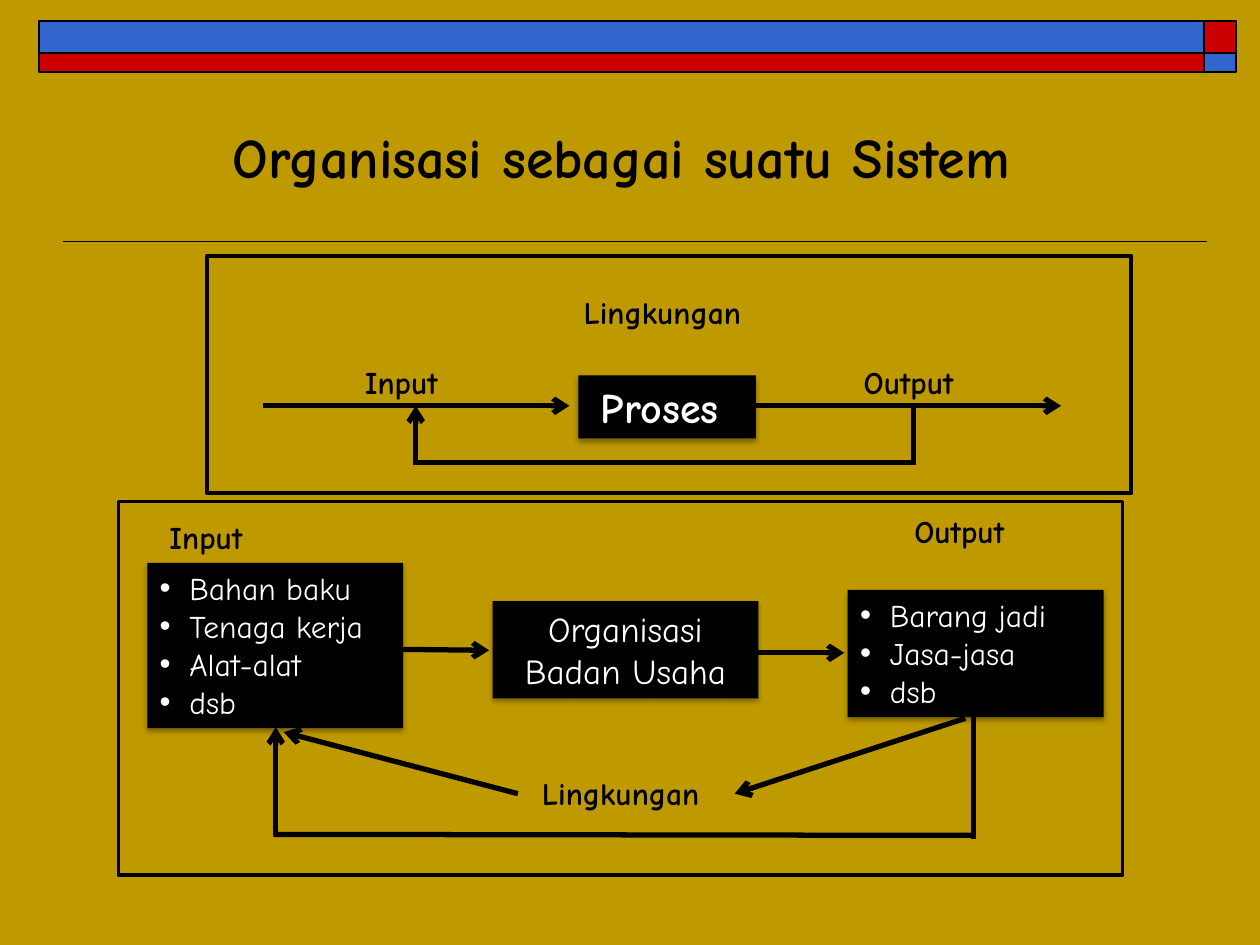
from lxml import etree
from pptx import Presentation
from pptx.dml.color import RGBColor
from pptx.enum.shapes import MSO_CONNECTOR, MSO_SHAPE
from pptx.enum.text import MSO_ANCHOR, PP_ALIGN
from pptx.oxml import parse_xml
from pptx.oxml.ns import nsdecls, qn
from pptx.util import Cm, Pt

GOLD = RGBColor(0xBF, 0x99, 0x00)
BLUE = RGBColor(0x33, 0x66, 0xCC)
RED = RGBColor(0xCC, 0x00, 0x00)
BLACK = RGBColor(0x00, 0x00, 0x00)
WHITE = RGBColor(0xFF, 0xFF, 0xFF)
FONT = "Comic Neue"
RECTANGLE = MSO_SHAPE.RECTANGLE
STRAIGHT = MSO_CONNECTOR.STRAIGHT
CENTER, LEFT = PP_ALIGN.CENTER, PP_ALIGN.LEFT
TOP, BOTTOM = MSO_ANCHOR.TOP, MSO_ANCHOR.BOTTOM
SHADOW = (
    f'<a:effectLst {nsdecls("a")}><a:outerShdw blurRad="40000" dist="23000" '
    'dir="5400000" rotWithShape="0"><a:srgbClr val="000000">'
    '<a:alpha val="35000"/></a:srgbClr></a:outerShdw></a:effectLst>'
)


def write_text(shape, lines, size, color, bold, bulleted=False, anchor=TOP):
    frame = shape.text_frame
    frame.word_wrap = True
    frame.vertical_anchor = anchor
    frame.text = "\n".join(lines)
    font_format = {"name": FONT, "size": Pt(size), "bold": bold}
    for paragraph in frame.paragraphs:
        paragraph.alignment = LEFT if bulleted else CENTER
        font = paragraph.runs[0].font
        for name, value in font_format.items():
            setattr(font, name, value)
        font.color.rgb = color
        if bulleted:
            properties = paragraph._p.get_or_add_pPr()
            properties.set("marL", str(Cm(0.6)))
            properties.set("indent", str(-Cm(0.6)))
            bullet_font = etree.SubElement(properties, qn("a:buFont"))
            bullet_font.set("typeface", "Arial")
            etree.SubElement(properties, qn("a:buChar")).set("char", "•")


def add_line(x1, y1, x2, y2, width=3, arrow=False):
    line = slide.shapes.add_connector(STRAIGHT, Cm(x1), Cm(y1), Cm(x2), Cm(y2))
    line.line.color.rgb = BLACK
    line.line.width = Pt(width)
    if arrow:
        end = etree.SubElement(line.line._get_or_add_ln(), qn("a:tailEnd"))
        end.set("type", "arrow")
    etree.SubElement(line._element.spPr, qn("a:effectLst"))


presentation = Presentation()
presentation.slide_width, presentation.slide_height = Cm(25.4), Cm(19.05)
slide = presentation.slides.add_slide(presentation.slide_layouts[5])
slide.background.fill.solid()
slide.background.fill.fore_color.rgb = GOLD

# Header band and rule
add_line(24.33, 4.87, 1.27, 4.87, width=1)
band_columns = [(0.78, 23.5), (24.28, 0.64)]
band_rows = [(0.43, 0.64), (1.07, 0.38)]
for row, (top, height) in enumerate(band_rows):
    for column, (left, width) in enumerate(band_columns):
        bar = slide.shapes.add_shape(
            RECTANGLE, Cm(left), Cm(top), Cm(width), Cm(height))
        bar.shadow.inherit = False
        bar.fill.solid()
        bar.fill.fore_color.rgb = BLUE if row == column else RED
        bar.line.color.rgb = BLACK
        bar.line.width = Pt(1)

# Title
title = slide.shapes.title
title.left, title.top, title.width, title.height = (
    Cm(2.59), Cm(1.78), Cm(19.89), Cm(2.18))
write_text(title, ["Organisasi sebagai suatu Sistem"], 32, BLACK, True,
           anchor=BOTTOM)

# Frames around the general system and the organisation
for left, top, width, height in [(4.17, 5.16, 18.64, 4.78),
                                 (2.39, 10.11, 20.24, 7.54)]:
    frame = slide.shapes.add_shape(
        RECTANGLE, Cm(left), Cm(top), Cm(width), Cm(height))
    frame.shadow.inherit = False
    frame.fill.background()
    frame.line.color.rgb = BLACK
    frame.line.width = Pt(2.25)

# Labels
labels = [
    ("Input ", 6.91, 7.19, 2.59),
    ("Output ", 16.84, 7.19, 3.18),
    ("Lingkungan ", 11.28, 5.79, 4.37),
    ("Input ", 2.97, 10.31, 2.59),
    ("Output ", 17.86, 10.19, 3.18),
    ("Lingkungan ", 10.44, 15.47, 4.37),
]
for text, left, top, width in labels:
    label = slide.shapes.add_textbox(Cm(left), Cm(top), Cm(width), Cm(1.02))
    write_text(label, [text], 18, BLACK, True)

# Black boxes: lines, left, top, width, height, size, bold, bulleted
boxes = [
    (["Proses "], 11.66, 7.57, 3.58, 1.27, 24, True, False),
    (["Bahan baku", "Tenaga kerja", "Alat-alat", "dsb"],
     2.97, 11.35, 5.16, 3.33, 18, False, True),
    (["Barang jadi", "Jasa-jasa", "dsb"],
     17.09, 11.89, 5.16, 2.57, 18, False, True),
    (["Organisasi Badan Usaha"], 9.93, 12.12, 5.36, 1.96, 20, False, False),
]
for lines, left, top, width, height, size, bold, bulleted in boxes:
    box = slide.shapes.add_shape(
        RECTANGLE, Cm(left), Cm(top), Cm(width), Cm(height))
    box.fill.solid()
    box.fill.fore_color.rgb = BLACK
    box.line.fill.background()
    box._element.spPr.append(parse_xml(SHADOW))
    write_text(box, lines, size, WHITE, bold, bulleted)

# Arrows, each pointing at its second end
arrows = [
    (5.31, 8.18, 11.48, 8.18),
    (15.24, 8.18, 21.39, 8.18),
    (8.38, 9.32, 8.38, 8.18),
    (8.05, 13.09, 9.86, 13.11),
    (15.24, 13.16, 17.02, 13.16),
    (19.46, 14.48, 14.81, 16),
    (10.44, 16, 5.72, 14.76),
    (5.56, 16.84, 5.56, 14.66),
]
for ends in arrows:
    add_line(*ends, arrow=True)

# Plain parts of the feedback loops
feedback_lines = [
    (18.42, 8.2, 18.42, 9.37),
    (8.33, 9.32, 18.47, 9.32),
    (19.63, 14.33, 19.63, 16.92),
    (5.51, 16.82, 19.61, 16.84),
]
for ends in feedback_lines:
    add_line(*ends)

presentation.save("out.pptx")
